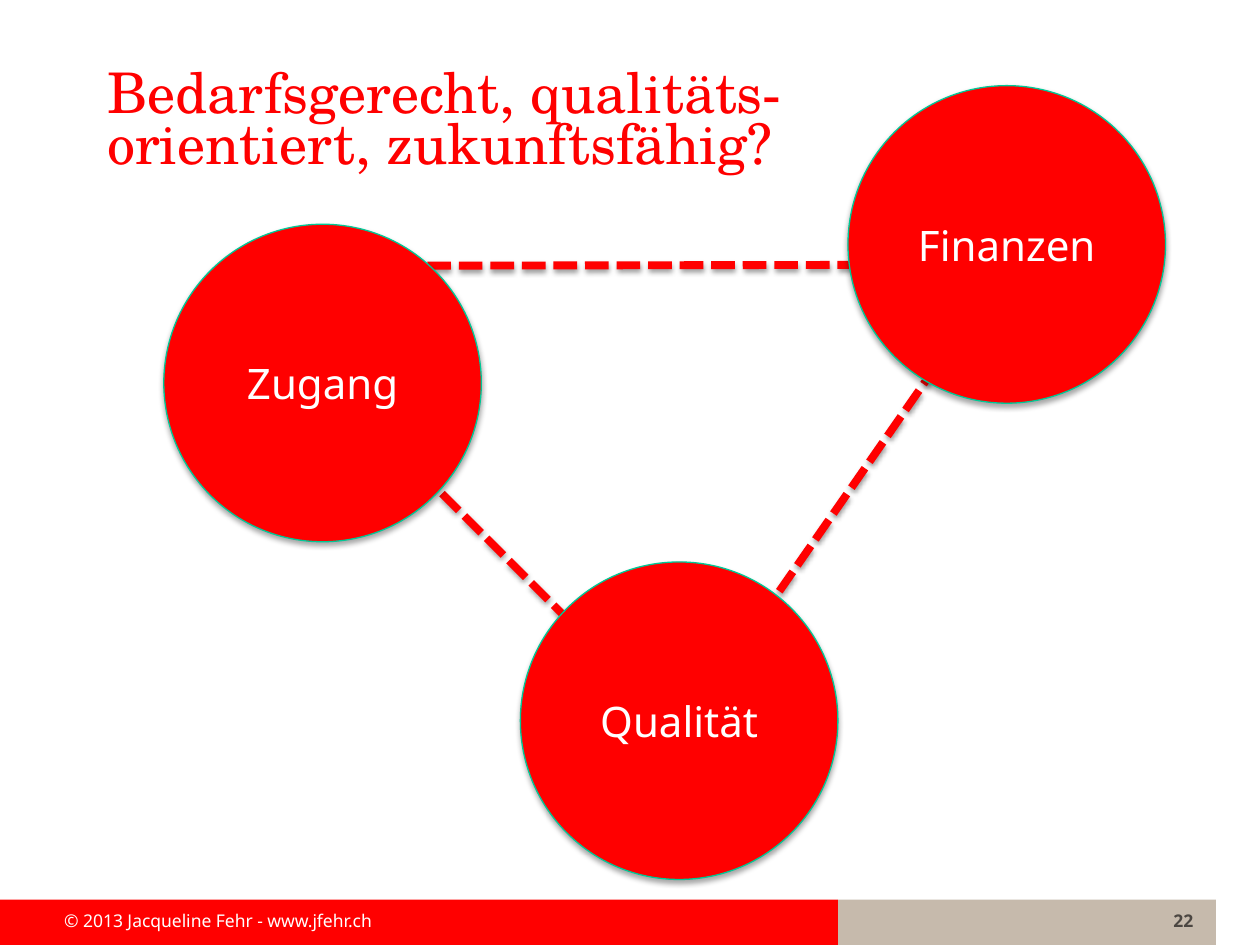
from dataclasses import dataclass

from lxml import etree
from pptx import Presentation
from pptx.dml.color import RGBColor
from pptx.enum.dml import MSO_LINE
from pptx.enum.shapes import MSO_CONNECTOR, MSO_SHAPE
from pptx.enum.text import MSO_ANCHOR, MSO_AUTO_SIZE, PP_ALIGN
from pptx.oxml.ns import qn
from pptx.util import Inches, Pt

DASH = MSO_LINE.SQUARE_DOT
OVAL, RECT = MSO_SHAPE.OVAL, MSO_SHAPE.RECTANGLE
LINE = MSO_CONNECTOR.STRAIGHT
TOP, MID = MSO_ANCHOR.TOP, MSO_ANCHOR.MIDDLE
LEFT, MIDDLE, RIGHT = PP_ALIGN.LEFT, PP_ALIGN.CENTER, PP_ALIGN.RIGHT
FIXED = MSO_AUTO_SIZE.NONE
COLS, ROWS = 100, 75
CELL = Inches(10) // COLS


@dataclass(frozen=True)
class Theme:
    """Colours, fonts and type sizes of the slide."""
    red: str = "FF0000"
    sand: str = "C6BAAC"
    green: str = "00C896"
    white: str = "FFFFFF"
    dark: str = "4C4742"
    black: str = "000000"
    serif: str = "TeX Gyre Schola"
    sans: str = "Noto Sans"
    head: int = 32
    label: int = 24
    small: int = 10


THEME = Theme()


def span(*cells):
    """Turn grid cells into lengths."""
    return [round(cell * CELL) for cell in cells]


def style(para, color, align=LEFT, **look):
    """Format one paragraph from a dict of font values."""
    para.alignment = align
    for name, value in look.items():
        setattr(para.font, name, value)
    para.font.color.rgb = RGBColor.from_string(color)


def shade(shape, alpha, dist):
    """Drop a soft shadow straight below a shape."""
    props = shape._element.spPr
    group = etree.SubElement(props, qn("a:effectLst"))
    drop = etree.SubElement(group, qn("a:outerShdw"), blurRad=str(Pt(3.1)),
                            dist=str(Pt(dist)), dir="5400000", rotWithShape="0")
    tint = etree.SubElement(drop, qn("a:srgbClr"), val=THEME.black)
    etree.SubElement(tint, qn("a:alpha"), val=str(alpha * 1000))


def head(slide, box, text):
    """Place the title in its box."""
    title = slide.shapes.title
    title.left, title.top, title.width, title.height = span(*box)
    frame = title.text_frame
    frame.text = text
    for name, value in dict(auto_size=FIXED, vertical_anchor=MID, word_wrap=True).items():
        setattr(frame, name, value)
    para = frame.paragraphs[0]
    para.line_spacing = 0.75
    style(para, THEME.red, name=THEME.serif, size=Pt(THEME.head))


def band(slide, box, color):
    """Draw one plain footer band."""
    bar = slide.shapes.add_shape(RECT, *span(*box))
    bar.shadow.inherit = False
    bar.fill.solid()
    bar.fill.fore_color.rgb = RGBColor.from_string(color)
    bar.line.fill.background()


def note(slide, box, text, color, align=LEFT, bold=False):
    """Write one small footer text."""
    frame = slide.shapes.add_textbox(*span(*box)).text_frame
    frame.word_wrap = True
    frame.vertical_anchor = TOP
    frame.text = text
    style(frame.paragraphs[0], color, align, name=THEME.sans,
          size=Pt(THEME.small), bold=bold)


def foot(slide, box):
    """Fill the footer box with two bands, the source and the page number."""
    left, top, wide, high = box
    split = left + 66.5
    band(slide, (split, top, left + wide - split, high), THEME.sand)
    band(slide, (left, top, split - left, high), THEME.red)
    note(slide, (left + 4.1, top + 0.3, 32.5, 5),
         "© 2013 Jacqueline Fehr - www.jfehr.ch", THEME.white)
    note(slide, (left + wide - 26.8, top + 0.3, 26, 5), "22",
         THEME.dark, RIGHT, True)


def link(slide, start, end):
    """Draw a dashed line between two grid points."""
    line = slide.shapes.add_connector(LINE, *span(*start, *end))
    line.line.color.rgb = RGBColor.from_string(THEME.red)
    line.line.width = Pt(4.5)
    line.line.dash_style = DASH
    shade(line, 38, 1.6)


def disc(slide, box, text):
    """Draw one labelled circle."""
    oval = slide.shapes.add_shape(OVAL, *span(*box))
    oval.fill.solid()
    oval.fill.fore_color.rgb = RGBColor.from_string(THEME.red)
    oval.line.color.rgb = RGBColor.from_string(THEME.green)
    oval.line.width = Pt(0.75)
    shade(oval, 35, 1.8)
    frame = oval.text_frame
    frame.text = text
    frame.vertical_anchor = MID
    style(frame.paragraphs[0], THEME.white, MIDDLE, name=THEME.sans,
          size=Pt(THEME.label))


def web(slide, box):
    """Place three linked circles inside the box."""
    left, top, wide, high = box
    size = 25.2
    access = (left + 13.4, top + 14.3)
    money = (left + wide - 12.6, top + 14.2)
    merit = (left + 41.7, top + high - 12.6)
    for start, end in ((access, money), (merit, money),
                       ((left + 15, top + 25.3), (left + 41.7, top + 52))):
        link(slide, start, (end[0], end[1]))
    spots = (("Zugang", 0, 11), ("Finanzen", wide - size, 0),
             ("Qualität", 28.3, high - size))
    for text, col, row in spots:
        disc(slide, (left + col, top + row, size, size), text)


def main():
    """Build and save the slide."""
    deck = Presentation()
    deck.slide_width, deck.slide_height = span(COLS, ROWS)
    slide = deck.slides.add_slide(deck.slide_layouts[5])
    head(slide, (7.5, 3.6, 81.1, 12.5),
         "Bedarfsgerecht, qualitäts-\vorientiert, zukunftsfähig?")
    foot(slide, (0, 71.4, 96.5, 3.6))
    web(slide, (13, 6.8, 79.5, 63))
    deck.save("out.pptx")


if __name__ == "__main__":
    main()
